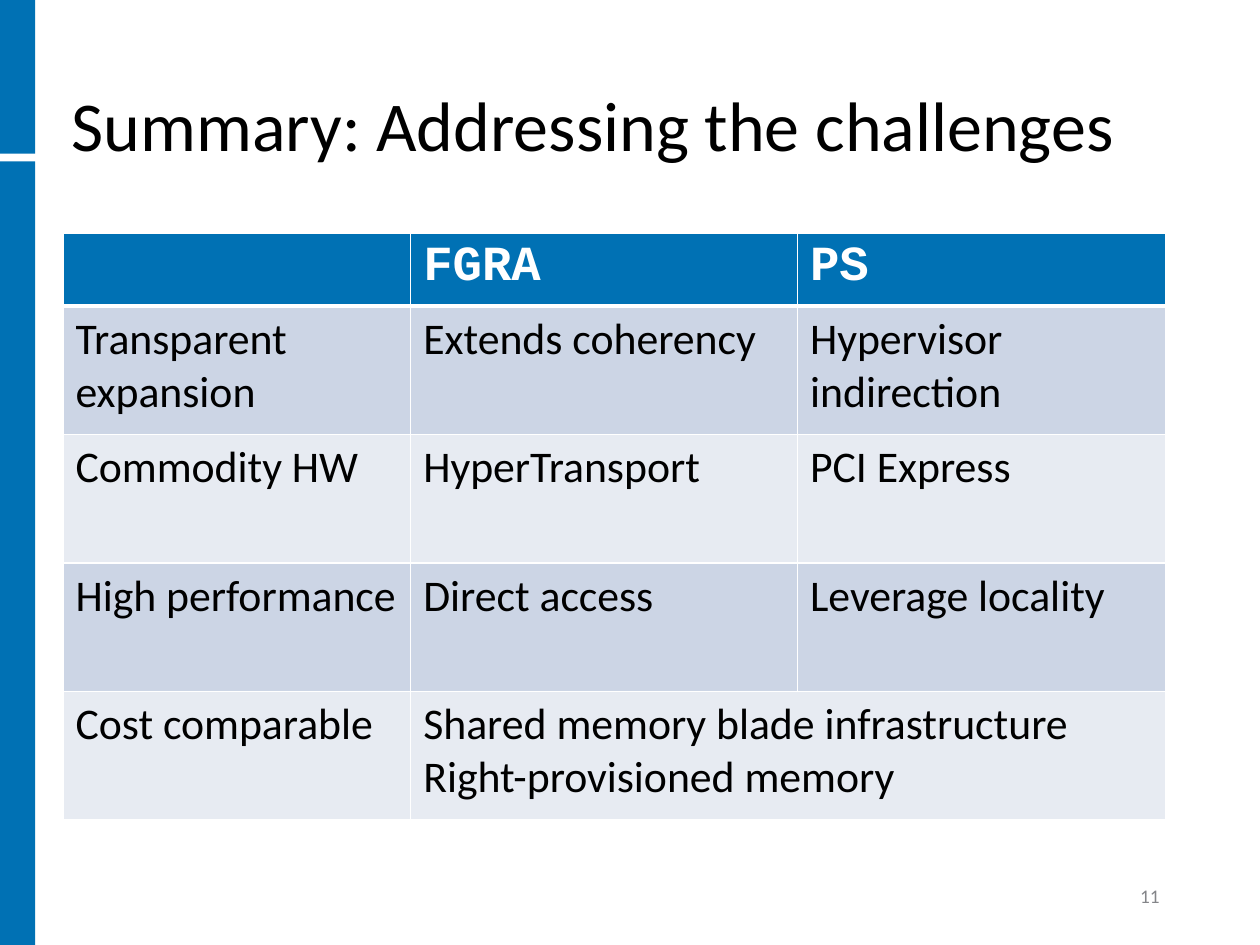
from dataclasses import dataclass

from lxml.etree import SubElement
from pptx import Presentation
from pptx.dml.color import RGBColor
from pptx.enum.shapes import MSO_SHAPE
from pptx.enum.text import MSO_ANCHOR
from pptx.oxml.ns import qn
from pptx.slide import Slide
from pptx.table import _Cell
from pptx.text.text import TextFrame
from pptx.util import Emu, Pt

EMU_PER_PX = 9144


@dataclass(frozen=True)
class TextStyle:
    font: str
    size: int
    color: str
    bold: bool = False
    line_spacing: float = 1.0


@dataclass(frozen=True)
class Theme:
    accent: str = "0071B4"
    border: str = "FFFFFF"
    bands: tuple[str, str] = ("CCD5E5", "E7EBF2")
    title: TextStyle = TextStyle("Calibri", 40, "000000", line_spacing=0.9)
    header: TextStyle = TextStyle("Courier New", 28, "FFFFFF", bold=True)
    body: TextStyle = TextStyle("Calibri", 25, "000000")
    page_number: TextStyle = TextStyle("Calibri", 11, "848589")


@dataclass(frozen=True)
class Box:
    left: int
    top: int
    width: int
    height: int

    def emu(self) -> tuple[Emu, Emu, Emu, Emu]:
        return px(self.left), px(self.top), px(self.width), px(self.height)


@dataclass(frozen=True)
class Label:
    box: Box
    text: str
    style: TextStyle


THEME = Theme()
SIDE_BARS = (Box(0, 128, 28, 622), Box(0, 0, 28, 122))
LABELS = (
    Label(Box(47, 12, 902, 125), "Summary: Addressing the challenges", THEME.title),
    Label(Box(895, 701, 55, 24), "11", THEME.page_number),
)
TABLE_BOX = Box(50, 185, 875, 466)
COLUMN_WIDTHS = (276, 307, 292)
ROW_HEIGHTS = (58, 102, 102, 102, 102)
ROWS = (
    ("", "FGRA", "PS"),
    ("Transparent expansion", "Extends coherency", "Hypervisor indirection"),
    ("Commodity HW", "HyperTransport", "PCI Express"),
    ("High performance", "Direct access", "Leverage locality"),
    ("Cost comparable", "Shared memory blade infrastructure\nRight-provisioned memory", ""),
)


def px(length: int) -> Emu:
    return Emu(length * EMU_PER_PX)


def write_text(frame: TextFrame, text: str, style: TextStyle) -> None:
    for index, line in enumerate(text.split("\n")):
        paragraph = frame.add_paragraph() if index else frame.paragraphs[0]
        paragraph.line_spacing = style.line_spacing
        if not line:
            continue
        run = paragraph.add_run()
        run.text = line
        run.font.name = style.font
        run.font.size = Pt(style.size)
        run.font.bold = style.bold
        run.font.color.rgb = RGBColor.from_string(style.color)


def draw_bar(slide: Slide, box: Box) -> None:
    shape = slide.shapes.add_shape(MSO_SHAPE.RECTANGLE, *box.emu())
    shape.shadow.inherit = False
    shape.fill.solid()
    shape.fill.fore_color.rgb = RGBColor.from_string(THEME.accent)
    shape.line.fill.background()


def draw_label(slide: Slide, label: Label) -> None:
    frame = slide.shapes.add_textbox(*label.box.emu()).text_frame
    frame.word_wrap = True
    frame.vertical_anchor = MSO_ANCHOR.BOTTOM
    write_text(frame, label.text, label.style)


def set_borders(cell: _Cell, top: int, bottom: int) -> None:
    properties = cell._tc.get_or_add_tcPr()
    widths = {"a:lnL": 1, "a:lnR": 1, "a:lnT": top, "a:lnB": bottom}
    for tag, width in widths.items():
        line = SubElement(properties, qn(tag), w=str(Pt(width)))
        fill = SubElement(line, qn("a:solidFill"))
        SubElement(fill, qn("a:srgbClr"), val=THEME.border)


def style_cell(cell: _Cell, row: int) -> None:
    set_borders(cell, top=3 if row == 1 else 1, bottom=3 if row == 0 else 1)
    color = THEME.bands[(row - 1) % 2] if row else THEME.accent
    cell.fill.solid()
    cell.fill.fore_color.rgb = RGBColor.from_string(color)


def draw_table(slide: Slide) -> None:
    table = slide.shapes.add_table(len(ROWS), len(COLUMN_WIDTHS), *TABLE_BOX.emu()).table
    for column, width in zip(table.columns, COLUMN_WIDTHS):
        column.width = px(width)
    for row, height in zip(table.rows, ROW_HEIGHTS):
        row.height = px(height)
    for row_index, texts in enumerate(ROWS):
        for column_index, text in enumerate(texts):
            cell = table.cell(row_index, column_index)
            style_cell(cell, row_index)
            write_text(cell.text_frame, text, THEME.body if row_index else THEME.header)
    last_row = len(ROWS) - 1
    table.cell(last_row, 1).merge(table.cell(last_row, 2))


def main() -> None:
    presentation = Presentation()
    presentation.slide_width = px(1000)
    presentation.slide_height = px(750)
    slide = presentation.slides.add_slide(presentation.slide_layouts[6])
    for box in SIDE_BARS:
        draw_bar(slide, box)
    for label in LABELS:
        draw_label(slide, label)
    draw_table(slide)
    presentation.save("out.pptx")


if __name__ == "__main__":
    main()
